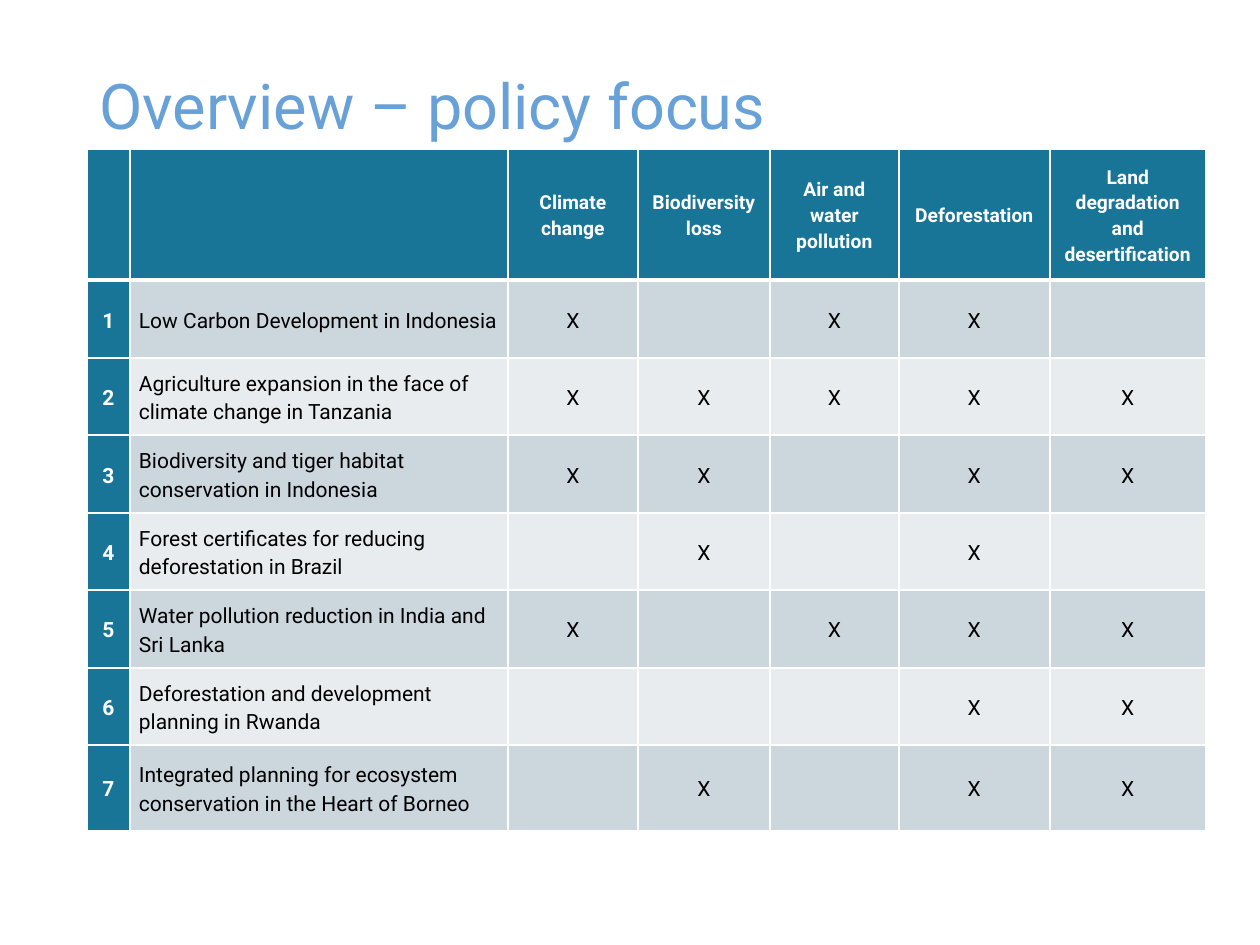
"""Build a slide with a table of projects and their policy focus."""
import lxml.etree
import pptx
import pptx.dml.color
import pptx.enum.text
import pptx.oxml.ns
import pptx.util

EMU_PER_PX = 914400 // 126
FONT = "Roboto"
TEAL, WHITE, BLACK, BLUE = "197598", "FFFFFF", "000000", "68A1D7"
BANDS = ("CCD6DD", "E8ECEF")
COLUMN_WIDTHS = [43, 378, 130, 132, 129, 151, 156]
ROW_HEIGHTS = [131] + [78, 77] * 3 + [86]
POLICIES = ["Climate change", "Biodiversity loss", "Air and water pollution",
            "Deforestation", "Land degradation and desertification"]
PROJECTS = [
    ("Low Carbon Development in Indonesia", "X-XX-"),
    ("Agriculture expansion in the face of climate change in Tanzania", "XXXXX"),
    ("Biodiversity and tiger habitat conservation in Indonesia", "XX-XX"),
    ("Forest certificates for reducing deforestation in Brazil", "-X-X-"),
    ("Water pollution reduction in India and Sri Lanka", "X-XXX"),
    ("Deforestation and development planning in Rwanda", "---XX"),
    ("Integrated planning for ecosystem conservation in the Heart of Borneo", "-X-XX"),
]


def px(length):
    return pptx.util.Emu(length * EMU_PER_PX)


def rgb(value):
    return pptx.dml.color.RGBColor.from_string(value)


def style_font(paragraph, size, color, bold=False):
    font = paragraph.font
    font.name = FONT
    font.size = pptx.util.Pt(size)
    font.bold = bold
    font.color.rgb = rgb(color)


def add_title(slide, text):
    shape = slide.shapes.add_textbox(px(87), px(67), px(945), px(82))
    frame = shape.text_frame
    frame.word_wrap = True
    frame.vertical_anchor = pptx.enum.text.MSO_ANCHOR.BOTTOM
    paragraph = frame.paragraphs[0]
    paragraph.text = text
    paragraph.line_spacing = 0.9
    style_font(paragraph, 36, BLUE)


def add_border(cell, side, width):
    qn = pptx.oxml.ns.qn
    line = lxml.etree.SubElement(cell._tc.get_or_add_tcPr(), qn(f"a:ln{side}"),
                                 w=str(pptx.util.Pt(width)))
    fill = lxml.etree.SubElement(line, qn("a:solidFill"))
    lxml.etree.SubElement(fill, qn("a:srgbClr"), val=WHITE)


def fill_cell(cell, text, row, column):
    header = row == 0 or column == 0
    for side, width in (("L", 1), ("R", 1), ("T", 3 if row == 1 else 1),
                        ("B", 3 if row == 0 else 1)):
        add_border(cell, side, width)
    cell.fill.solid()
    cell.fill.fore_color.rgb = rgb(TEAL if header else BANDS[(row - 1) % 2])
    cell.vertical_anchor = pptx.enum.text.MSO_ANCHOR.MIDDLE
    cell.margin_left = cell.margin_right = px(9)
    cell.margin_top = cell.margin_bottom = 0
    paragraph = cell.text_frame.paragraphs[0]
    paragraph.text = text
    paragraph.line_spacing = 1.15
    align = pptx.enum.text.PP_ALIGN
    paragraph.alignment = align.LEFT if column == 1 else align.CENTER
    style_font(paragraph, 11 if row == 0 else 12, WHITE if header else BLACK, header)


def add_policy_table(slide):
    rows = [["", ""] + POLICIES]
    for number, (project, marks) in enumerate(PROJECTS, 1):
        rows.append([str(number), project] + [mark.strip("-") for mark in marks])
    table = slide.shapes.add_table(
        len(rows), len(COLUMN_WIDTHS), px(87), px(149),
        px(sum(COLUMN_WIDTHS)), px(sum(ROW_HEIGHTS))).table
    table.first_col = True
    for column, width in zip(table.columns, COLUMN_WIDTHS):
        column.width = px(width)
    for row, height in zip(table.rows, ROW_HEIGHTS):
        row.height = px(height)
    for row, texts in enumerate(rows):
        for column, text in enumerate(texts):
            fill_cell(table.cell(row, column), text, row, column)


def main():
    presentation = pptx.Presentation()
    presentation.slide_width = px(1260)
    presentation.slide_height = px(945)
    slide = presentation.slides.add_slide(presentation.slide_layouts[6])
    add_title(slide, "Overview – policy focus")
    add_policy_table(slide)
    presentation.save("out.pptx")


if __name__ == "__main__":
    main()
